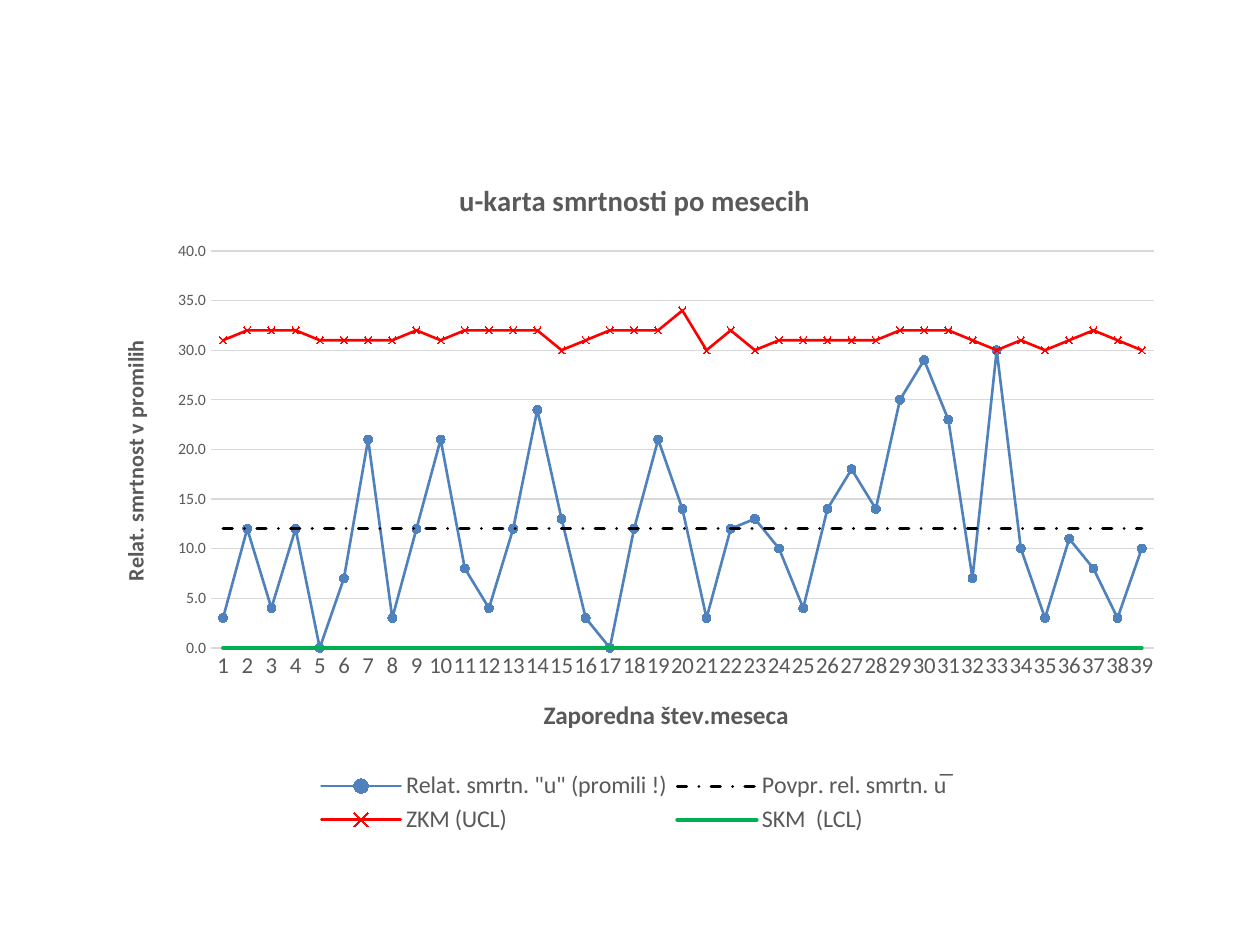
from dataclasses import dataclass

from lxml import etree
from pptx import Presentation
from pptx.chart.data import CategoryChartData
from pptx.dml.color import RGBColor
from pptx.enum.chart import (XL_CHART_TYPE, XL_LEGEND_POSITION,
                             XL_MARKER_STYLE, XL_TICK_MARK)
from pptx.enum.dml import MSO_LINE
from pptx.oxml.ns import qn
from pptx.util import Pt

LINE = XL_CHART_TYPE.LINE_MARKERS
BOTTOM = XL_LEGEND_POSITION.BOTTOM
NO_MARK = XL_MARKER_STYLE.NONE
DOT = XL_MARKER_STYLE.CIRCLE
CROSS = XL_MARKER_STYLE.X
NO_TICK = XL_TICK_MARK.NONE
SOLID = MSO_LINE.SOLID
DASH = MSO_LINE.DASH_DOT

PX = 914400 // 126


@dataclass(frozen=True)
class Theme:
    font: str = "Calibri"
    text: str = "595959"
    grid: str = "D9D9D9"
    rate: str = "4F81BD"
    mean: str = "000000"
    upper: str = "FF0000"
    lower: str = "00B050"
    title: float = 16.4
    xtitle: float = 14.4
    ytitle: float = 12.6
    xtick: float = 13
    ytick: float = 9
    legend: float = 13.7


THEME = Theme()

RATE = [3, 12, 4, 12, 0, 7, 21, 3, 12, 21, 8, 4, 12,
        24, 13, 3, 0, 12, 21, 14, 3, 12, 13, 10, 4, 14,
        18, 14, 25, 29, 23, 7, 30, 10, 3, 11, 8, 3, 10]
UPPER = [31, 32, 32, 32, 31, 31, 31, 31, 32, 31, 32, 32, 32,
         32, 30, 31, 32, 32, 32, 34, 30, 32, 30, 31, 31, 31,
         31, 31, 32, 32, 32, 31, 30, 31, 30, 31, 32, 31, 30]
COUNT = len(RATE)

# name, values, colour, width, dash, marker, marker size
SERIES = [
    ('Relat. smrtn. "u" (promili !)', RATE, THEME.rate, 1.5, SOLID, DOT, 5),
    ("Povpr. rel. smrtn. u̅", [12] * COUNT, THEME.mean, 1.75, DASH, NO_MARK, 0),
    ("ZKM (UCL)", UPPER, THEME.upper, 1.5, SOLID, CROSS, 4),
    ("SKM  (LCL)", [0] * COUNT, THEME.lower, 2.25, SOLID, NO_MARK, 0),
]


def style(font, size, bold=False):
    font.name = THEME.font
    font.size = Pt(size)
    font.bold = bold
    font.color.rgb = RGBColor.from_string(THEME.text)


def stroke(line, color, width):
    line.color.rgb = RGBColor.from_string(color)
    line.width = Pt(width)


def place(node, index, box, left, top, width=0, height=0, inner=False):
    """Fix a chart part at px offsets inside the chart box."""
    for old in node.findall(qn("c:layout")):
        node.remove(old)
    layout = etree.Element(qn("c:layout"))
    node.insert(index, layout)
    manual = etree.SubElement(layout, qn("c:manualLayout"))
    pairs = [("layoutTarget", "inner")] if inner else []
    pairs += [("xMode", "edge"), ("yMode", "edge"),
              ("x", left / box[2]), ("y", top / box[3])]
    if width:
        pairs += [("w", width / box[2]), ("h", height / box[3])]
    for tag, val in pairs:
        etree.SubElement(manual, qn("c:" + tag)).set("val", str(val))


def label(owner, text, size, box, left, top, turn=0):
    """Title of the chart or of an axis."""
    title = owner.chart_title if hasattr(owner, "chart_title") else owner.axis_title
    frame = title.text_frame
    run = frame.paragraphs[0].add_run()
    run.text = text
    style(run.font, size, True)
    body = frame._txBody.find(qn("a:bodyPr"))
    body.set("rot", str(turn))
    body.set("vert", "horz")
    place(title._element, 1, box, left, top)


def axes(chart, box):
    # Months
    cat = chart.category_axis
    cat.major_tick_mark = cat.minor_tick_mark = NO_TICK
    style(cat.tick_labels.font, THEME.xtick)
    stroke(cat.format.line, THEME.grid, 0.75)
    node = cat._element
    node.find(qn("c:txPr")).find(qn("a:bodyPr")).set("rot", "0")
    skip = etree.Element(qn("c:tickLblSkip"))
    skip.set("val", "1")
    node.find(qn("c:noMultiLvlLbl")).addprevious(skip)
    label(cat, "Zaporedna štev.meseca", THEME.xtitle, box, 445, 538)

    # Rate
    val = chart.value_axis
    val.minimum_scale, val.maximum_scale, val.major_unit = 0, 40, 5
    val.major_tick_mark = val.minor_tick_mark = NO_TICK
    style(val.tick_labels.font, THEME.ytick)
    val.tick_labels.number_format = "0.0"
    val.tick_labels.number_format_is_linked = False
    val.format.line.fill.background()
    val.has_major_gridlines = True
    stroke(val.major_gridlines.format.line, THEME.grid, 0.75)
    label(val, "Relat. smrtnost v promilih", THEME.ytitle, box, 22, 181, -5400000)


def lines(chart):
    for item, (_, _, color, width, dash, mark, size) in zip(chart.series, SERIES):
        item.smooth = False
        stroke(item.format.line, color, width)
        item.format.line.dash_style = dash
        item._element.find(qn("c:spPr")).find(qn("a:ln")).set("cap", "rnd")
        item.marker.style = mark
        if mark == NO_MARK:
            continue
        item.marker.size = size
        stroke(item.marker.format.line, color, 0.75)
        fill = item.marker.format.fill
        if mark == DOT:
            fill.solid()
            fill.fore_color.rgb = RGBColor.from_string(color)
        else:
            fill.background()


def control(slide, box):
    """Control chart with its titles, axes, lines and legend."""
    data = CategoryChartData(number_format="0.0")
    data.categories = [str(n + 1) for n in range(COUNT)]
    for name, vals, *_ in SERIES:
        data.add_series(name, vals)
    chart = slide.shapes.add_chart(LINE, *(n * PX for n in box), data).chart
    chart.font.name = THEME.font
    chart.font.size = Pt(10)
    chart.plots[0].vary_by_categories = False

    label(chart, "u-karta smrtnosti po mesecih", THEME.title, box, 360, 20)
    axes(chart, box)
    lines(chart)
    area = chart._chartSpace.chart.plotArea
    place(area, 0, box, 117, 96, 943, 397, True)

    # Legend
    chart.has_legend = True
    legend = chart.legend
    legend.position = BOTTOM
    legend.include_in_layout = False
    style(legend.font, THEME.legend)
    place(legend._element, 1, box, 217, 612, 646, 72)


def main():
    deck = Presentation()
    deck.slide_width, deck.slide_height = 1260 * PX, 945 * PX
    slide = deck.slides.add_slide(deck.slide_layouts[6])
    control(slide, (94, 155, 1081, 684))
    deck.save("out.pptx")


if __name__ == "__main__":
    main()
